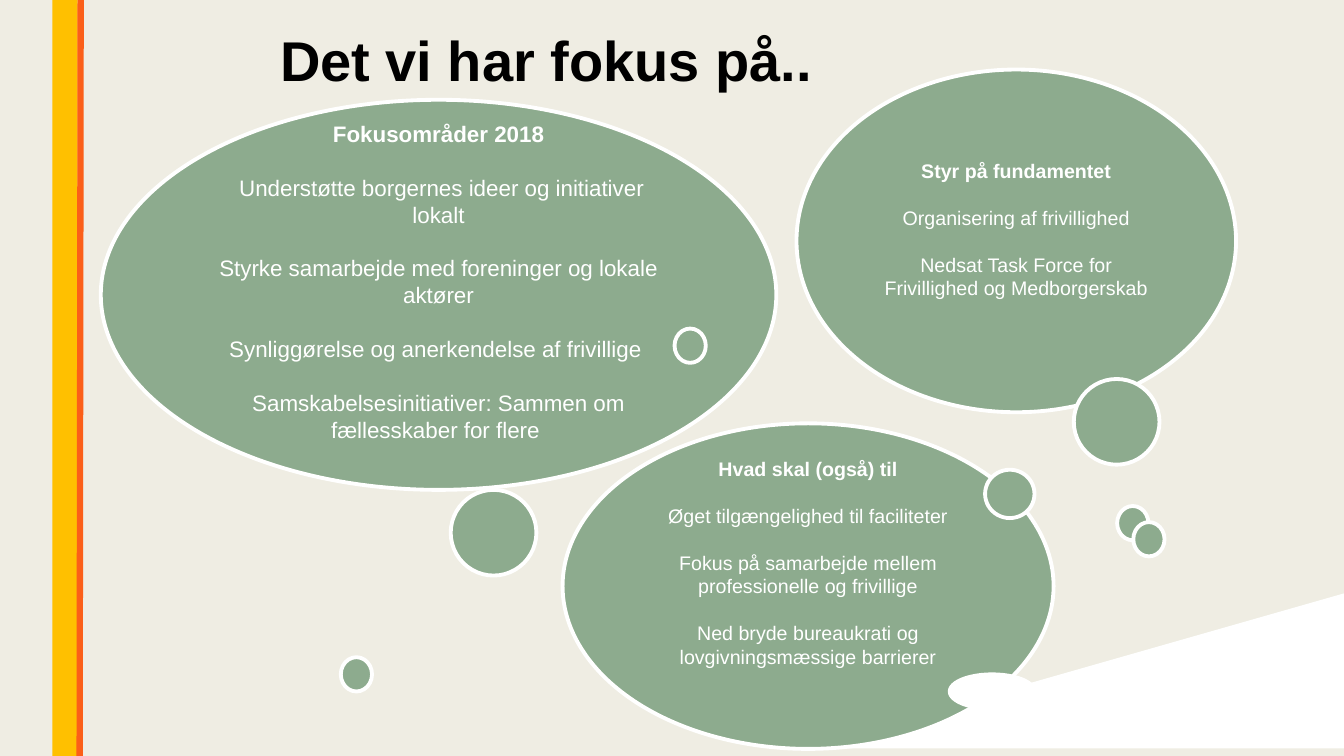
from dataclasses import dataclass

import pptx
import pptx.dml.color
import pptx.enum.shapes
import pptx.enum.text
import pptx.oxml.ns
import pptx.util
from lxml import etree

RGBColor = pptx.dml.color.RGBColor
MSO_SHAPE = pptx.enum.shapes.MSO_SHAPE
PP_ALIGN = pptx.enum.text.PP_ALIGN
MSO_ANCHOR = pptx.enum.text.MSO_ANCHOR

CREAM = RGBColor(0xEF, 0xED, 0xE3)
YELLOW = RGBColor(0xFF, 0xC0, 0x00)
ORANGE = RGBColor(0xFB, 0x5F, 0x19)
GREEN = RGBColor(0x8D, 0xAB, 0x8E)
WHITE = RGBColor(0xFF, 0xFF, 0xFF)
BLACK = RGBColor(0x00, 0x00, 0x00)

FONT = "Arial"
LEADING = 1.2  # line height relative to the font size
EMU_PER_PX = 9144  # 100 px to the inch


@dataclass(frozen=True)
class Box:
    x: int
    y: int
    w: int
    h: int


@dataclass(frozen=True)
class Bubble:
    box: Box
    size: int
    lines_below: int  # free lines under the text
    heading: str
    points: tuple[str, ...]


BUBBLES = [
    Bubble(Box(100, 99, 670, 387), 16, 1, "Fokusområder 2018", (
        " Understøtte borgernes ideer og initiativer lokalt",
        "Styrke samarbejde med foreninger og lokale aktører",
        "Synliggørelse og anerkendelse af frivillige ",
        "Samskabelsesinitiativer: Sammen om fællesskaber for flere ",
    )),
    Bubble(Box(790, 69, 436, 340), 14, 1, "Styr på fundamentet", (
        "Organisering af frivillighed",
        "Nedsat Task Force for Frivillighed og Medborgerskab",
    )),
    Bubble(Box(558, 420, 487, 323), 14, 2, "Hvad skal (også) til", (
        "Øget tilgængelighed til faciliteter",
        "Fokus på samarbejde mellem professionelle og frivillige",
        "Ned bryde bureaukrati og lovgivningsmæssige barrierer",
    )),
]

DOTS = [
    Box(1065, 376, 85, 85),
    Box(447, 486, 85, 85),
    Box(1108, 502, 31, 34),
    Box(977, 466, 49, 48),
    Box(1124, 518, 31, 34),
    Box(338, 652, 31, 34),
    Box(669, 326, 31, 34),
]


def px(n: int) -> pptx.util.Emu:
    return pptx.util.Emu(n * EMU_PER_PX)


def emu(box: Box) -> tuple:
    return px(box.x), px(box.y), px(box.w), px(box.h)


def add_shape(s, kind, box: Box, fill: RGBColor, outlined: bool = True):
    sp = s.shapes.add_shape(kind, *emu(box))
    sp.shadow.inherit = False
    sp.fill.solid()
    sp.fill.fore_color.rgb = fill
    if outlined:
        sp.line.color.rgb = WHITE
        sp.line.width = pptx.util.Pt(2.75)
    else:
        sp.line.fill.background()
    return sp


def add_text(tf, text: str, *, size: int, color: RGBColor, bold: bool = False,
             align=PP_ALIGN.LEFT, gap: float = 0, first: bool = False) -> None:
    p = tf.paragraphs[0] if first else tf.add_paragraph()
    p.alignment = align
    p.line_spacing = pptx.util.Pt(size * LEADING)
    p.space_before = pptx.util.Pt(gap)
    r = p.add_run()
    r.text = text
    r.font.name = FONT
    r.font.size = pptx.util.Pt(size)
    r.font.bold = bold
    r.font.color.rgb = color


def add_bubble(s, bubble: Bubble) -> None:
    tf = add_shape(s, MSO_SHAPE.OVAL, bubble.box, GREEN).text_frame
    tf.word_wrap = True
    tf.vertical_anchor = MSO_ANCHOR.MIDDLE
    line = bubble.size * LEADING
    tf.margin_bottom = pptx.util.Pt(3.6 + bubble.lines_below * line)
    style = dict(size=bubble.size, color=WHITE, align=PP_ALIGN.CENTER)
    add_text(tf, bubble.heading, bold=True, first=True, **style)
    for point in bubble.points:
        add_text(tf, point, gap=line, **style)


def add_side_bar(s) -> None:
    add_shape(s, MSO_SHAPE.RECTANGLE, Box(52, 0, 25, 750), YELLOW, outlined=False)
    edge = s.shapes.add_connector(pptx.enum.shapes.MSO_CONNECTOR.STRAIGHT,
                                  px(80), px(0), px(79), px(750))
    edge.line.color.rgb = ORANGE
    edge.line.width = pptx.util.Pt(4.5)
    etree.SubElement(edge._element.spPr, pptx.oxml.ns.qn("a:effectLst"))


def main() -> None:
    prs = pptx.Presentation()
    prs.slide_width, prs.slide_height = px(1333), px(750)
    s = prs.slides.add_slide(prs.slide_layouts[6])
    s.background.fill.solid()
    s.background.fill.fore_color.rgb = CREAM

    add_side_bar(s)

    # White wedge in the lower right corner
    wedge = add_shape(s, MSO_SHAPE.RIGHT_TRIANGLE, Box(996, 403, 150, 525), WHITE)
    wedge.rotation = 270

    # Title
    tf = s.shapes.add_textbox(*emu(Box(268, 20, 890, 77))).text_frame
    tf.word_wrap = True
    add_text(tf, "Det vi har fokus på..", size=40, color=BLACK, bold=True, first=True)

    # Thought bubbles and their trailing dots
    for bubble in BUBBLES:
        add_bubble(s, bubble)
    for dot in DOTS:
        add_shape(s, MSO_SHAPE.OVAL, dot, GREEN)
    add_shape(s, MSO_SHAPE.OVAL, Box(942, 669, 84, 34), WHITE)

    prs.save("out.pptx")


if __name__ == "__main__":
    main()
